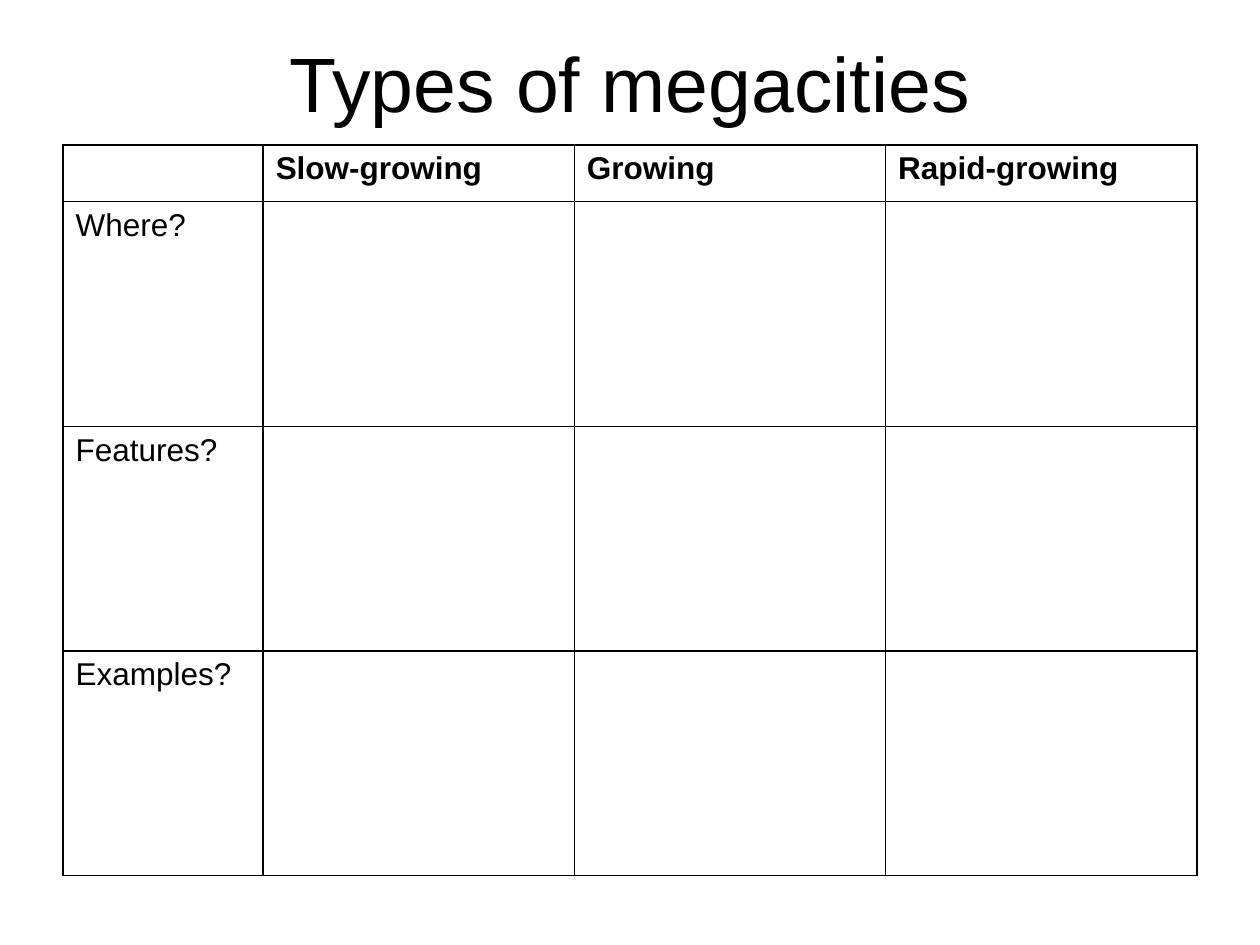
"""Build a slide with an empty comparison table of megacity types."""
from pptx import Presentation
from pptx.dml.color import RGBColor
from pptx.enum.text import MSO_ANCHOR, PP_ALIGN
from pptx.oxml import parse_xml
from pptx.oxml.ns import nsdecls
from pptx.util import Pt

TITLE = "Types of megacities"
TYPES = ["Slow-growing", "Growing", "Rapid-growing"]
QUESTIONS = ["Where?", "Features?", "Examples?"]

COLORS = {"ink": "000000", "paper": "FFFFFF"}
FONT = "Arial"
MARGIN, WIDTH = 36, 648
TITLE_TOP, TITLE_HEIGHT = 21.6, 49.7
TABLE_TOP, TABLE_HEIGHT = 82.8, 417.6
LABEL_WIDTH, HEADER_HEIGHT = 114.4, 32.4


def style_text(paragraph, size, bold=False):
    font = paragraph.font
    for run in paragraph.runs:
        font = run.font
    font.name = FONT
    font.size = Pt(size)
    font.bold = bold
    font.color.rgb = RGBColor.from_string(COLORS["ink"])


def add_borders(cell):
    properties = cell._tc.get_or_add_tcPr()
    for index, side in enumerate(("lnL", "lnR", "lnT", "lnB")):
        border = parse_xml(
            f'<a:{side} {nsdecls("a")} w="{Pt(1)}"><a:solidFill>'
            f'<a:srgbClr val="{COLORS["ink"]}"/></a:solidFill></a:{side}>'
        )
        properties.insert(index, border)


def add_title(slide):
    title = slide.shapes.title
    title.left, title.top = Pt(MARGIN), Pt(TITLE_TOP)
    title.width, title.height = Pt(WIDTH), Pt(TITLE_HEIGHT)
    frame = title.text_frame
    frame.text = TITLE
    frame.vertical_anchor = MSO_ANCHOR.MIDDLE
    frame.paragraphs[0].alignment = PP_ALIGN.CENTER
    style_text(frame.paragraphs[0], 44)


def add_comparison(slide):
    rows = [["", *TYPES]] + [[question] + [""] * len(TYPES) for question in QUESTIONS]
    table = slide.shapes.add_table(
        len(rows), len(rows[0]), Pt(MARGIN), Pt(TABLE_TOP), Pt(WIDTH), Pt(TABLE_HEIGHT)
    ).table
    table.first_row = table.horz_banding = False

    type_width = (WIDTH - LABEL_WIDTH) / len(TYPES)
    for index, column in enumerate(table.columns):
        column.width = Pt(type_width if index else LABEL_WIDTH)
    question_height = (TABLE_HEIGHT - HEADER_HEIGHT) / len(QUESTIONS)
    for index, row in enumerate(table.rows):
        row.height = Pt(question_height if index else HEADER_HEIGHT)

    for row_index, texts in enumerate(rows):
        for column_index, text in enumerate(texts):
            cell = table.cell(row_index, column_index)
            if text:
                cell.text_frame.text = text
            style_text(cell.text_frame.paragraphs[0], 18, bold=row_index == 0)
            cell.fill.solid()
            cell.fill.fore_color.rgb = RGBColor.from_string(COLORS["paper"])
            add_borders(cell)


def main():
    presentation = Presentation()
    presentation.slide_width, presentation.slide_height = Pt(720), Pt(540)
    slide = presentation.slides.add_slide(presentation.slide_layouts[5])
    add_title(slide)
    add_comparison(slide)
    presentation.save("out.pptx")


if __name__ == "__main__":
    main()
